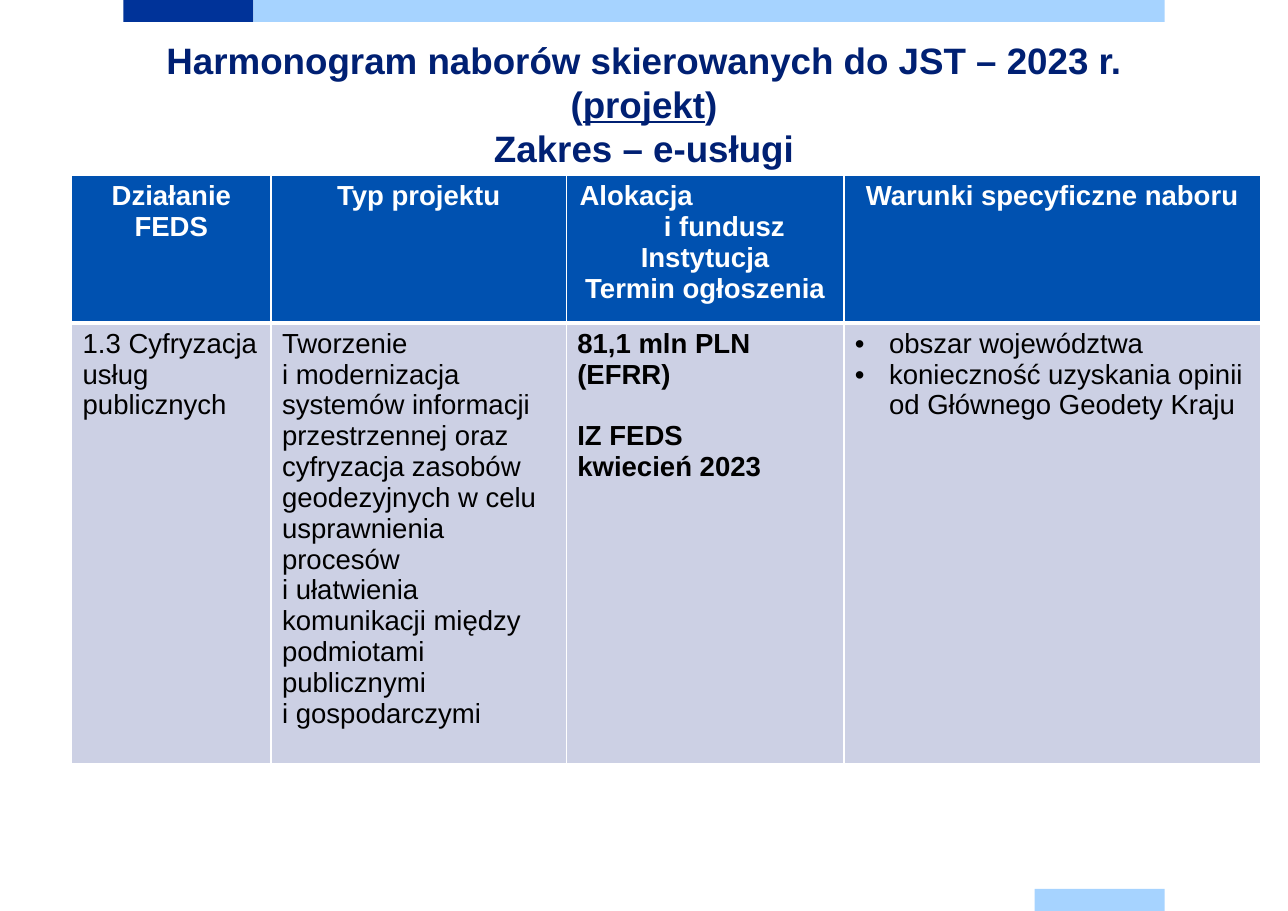
from dataclasses import dataclass
from typing import Optional

from lxml import etree
from pptx import Presentation
from pptx import util as u
from pptx.dml.color import RGBColor
from pptx.enum import shapes, text
from pptx.oxml import ns

FONT = "Arial"
WHITE, BLACK, NAVY = "FFFFFF", "000000", "002073"
DARK_BLUE, LIGHT_BLUE = "003399", "A6D3FF"
HEADER_FILL, BODY_FILL = "0051B0", "CCD0E4"
LEFT, CENTER = text.PP_ALIGN.LEFT, text.PP_ALIGN.CENTER


@dataclass
class Bar:
    left: float
    top: float
    width: float
    color: str


@dataclass
class Line:
    text: str
    align: text.PP_ALIGN = LEFT
    bold: bool = False
    bullet: bool = False
    indent: float = 0
    space_before: Optional[float] = None


BARS = [
    Bar(1.12, 0, 1.18, DARK_BLUE),
    Bar(2.3, 0, 8.27, LIGHT_BLUE),
    Bar(9.39, 8.07, 1.18, LIGHT_BLUE),
]
COLUMN_WIDTHS = [1.81, 2.68, 2.52, 3.78]
ROW_HEIGHTS = [1.34, 4.0]
HEADER = [
    [Line("Działanie FEDS", CENTER, True)],
    [Line("Typ projektu", CENTER, True)],
    [
        Line("Alokacja", LEFT, True, indent=0.02),
        Line("i fundusz", CENTER, True, indent=0.35),
        Line("Instytucja", CENTER, True),
        Line("Termin ogłoszenia", CENTER, True),
    ],
    [Line("Warunki specyficzne naboru", CENTER, True)],
]
BODY = [
    [Line("1.3 Cyfryzacja usług publicznych")],
    [Line("Tworzenie\vi modernizacja systemów informacji przestrzennej oraz "
          "cyfryzacja zasobów geodezyjnych w celu usprawnienia procesów\v"
          "i ułatwienia komunikacji między podmiotami publicznymi\v"
          "i gospodarczymi")],
    [
        Line("81,1 mln PLN (EFRR)", bold=True),
        Line("IZ FEDS", bold=True, space_before=20.25),
        Line("kwiecień 2023", bold=True),
    ],
    [
        Line("obszar województwa", bullet=True, indent=0.31),
        Line("konieczność uzyskania opinii od Głównego Geodety Kraju",
             bullet=True, indent=0.31),
    ],
]


def rgb(color: str) -> RGBColor:
    return RGBColor.from_string(color)


def format_paragraph(paragraph, size: float, color: str, bold: bool) -> None:
    font = paragraph.font
    font.name, font.size, font.bold = FONT, u.Pt(size), bold
    font.color.rgb = rgb(color)


def draw_bar(slide, bar: Bar) -> None:
    shape = slide.shapes.add_shape(
        shapes.MSO_SHAPE.RECTANGLE, u.Inches(bar.left), u.Inches(bar.top),
        u.Inches(bar.width), u.Inches(0.2))
    shape.shadow.inherit = False
    shape.fill.solid()
    shape.fill.fore_color.rgb = rgb(bar.color)
    shape.line.fill.background()


def write_title(slide) -> None:
    title = slide.shapes.title
    title.left, title.top = u.Inches(1.12), u.Inches(0.27)
    title.width, title.height = u.Inches(9.45), u.Inches(1.31)
    frame = title.text_frame
    frame.word_wrap = True
    frame.auto_size = text.MSO_AUTO_SIZE.NONE
    frame.vertical_anchor = text.MSO_ANCHOR.TOP
    frame.margin_top = u.Inches(0.07)
    heading, scope = frame.paragraphs[0], frame.add_paragraph()
    for words, underline in [
        ("Harmonogram naborów skierowanych do JST – 2023 r. (", False),
        ("projekt", True),
        (")", False),
    ]:
        run = heading.add_run()
        run.text = words
        run.font.underline = underline
    scope.text = "Zakres – e-usługi"
    for paragraph in (heading, scope):
        paragraph.alignment = CENTER
        paragraph.line_spacing = u.Pt(28.8)
        format_paragraph(paragraph, 24, NAVY, True)


def write_line(paragraph, line: Line, color: str) -> None:
    paragraph.text = line.text
    paragraph.alignment = line.align
    if line.space_before is not None:
        paragraph.space_before = u.Pt(line.space_before)
    properties = paragraph._p.get_or_add_pPr()
    if line.indent:
        properties.set("marL", str(u.Inches(line.indent)))
    if line.bullet:
        properties.set("indent", str(-u.Inches(line.indent)))
        etree.SubElement(properties, ns.qn("a:buFont"), typeface=FONT)
        etree.SubElement(properties, ns.qn("a:buChar"), char="•")
    format_paragraph(paragraph, 18, color, line.bold)


def set_borders(cell, top: float, bottom: float) -> None:
    properties = cell._tc.get_or_add_tcPr()
    widths = {"a:lnL": 1, "a:lnR": 1, "a:lnT": top, "a:lnB": bottom}
    for position, (tag, width) in enumerate(widths.items()):
        border = etree.Element(ns.qn(tag), w=str(u.Pt(width)))
        fill = etree.SubElement(border, ns.qn("a:solidFill"))
        etree.SubElement(fill, ns.qn("a:srgbClr"), val=WHITE)
        properties.insert(position, border)


def fill_cell(cell, lines: list[Line], fill: str, color: str) -> None:
    cell.fill.solid()
    cell.fill.fore_color.rgb = rgb(fill)
    frame = cell.text_frame
    for number, line in enumerate(lines):
        paragraph = frame.add_paragraph() if number else frame.paragraphs[0]
        write_line(paragraph, line, color)


def draw_table(slide) -> None:
    table = slide.shapes.add_table(
        len(ROW_HEIGHTS), len(COLUMN_WIDTHS), u.Inches(0.65), u.Inches(1.59),
        u.Inches(sum(COLUMN_WIDTHS)), u.Inches(sum(ROW_HEIGHTS))).table
    table.horz_banding = False
    for column, width in zip(table.columns, COLUMN_WIDTHS):
        column.width = u.Inches(width)
    for row, height in zip(table.rows, ROW_HEIGHTS):
        row.height = u.Inches(height)
    for index, (header, body) in enumerate(zip(HEADER, BODY)):
        header_cell, body_cell = table.cell(0, index), table.cell(1, index)
        fill_cell(header_cell, header, HEADER_FILL, WHITE)
        set_borders(header_cell, top=1, bottom=3)
        fill_cell(body_cell, body, BODY_FILL, BLACK)
        set_borders(body_cell, top=3, bottom=1)


def main() -> None:
    presentation = Presentation()
    presentation.slide_width = u.Inches(11.69)
    presentation.slide_height = u.Inches(8.27)
    slide = presentation.slides.add_slide(presentation.slide_layouts[5])

    # Coloured bars at the top and bottom edges
    for bar in BARS:
        draw_bar(slide, bar)

    # Title and schedule table
    write_title(slide)
    draw_table(slide)

    presentation.save("out.pptx")


if __name__ == "__main__":
    main()
